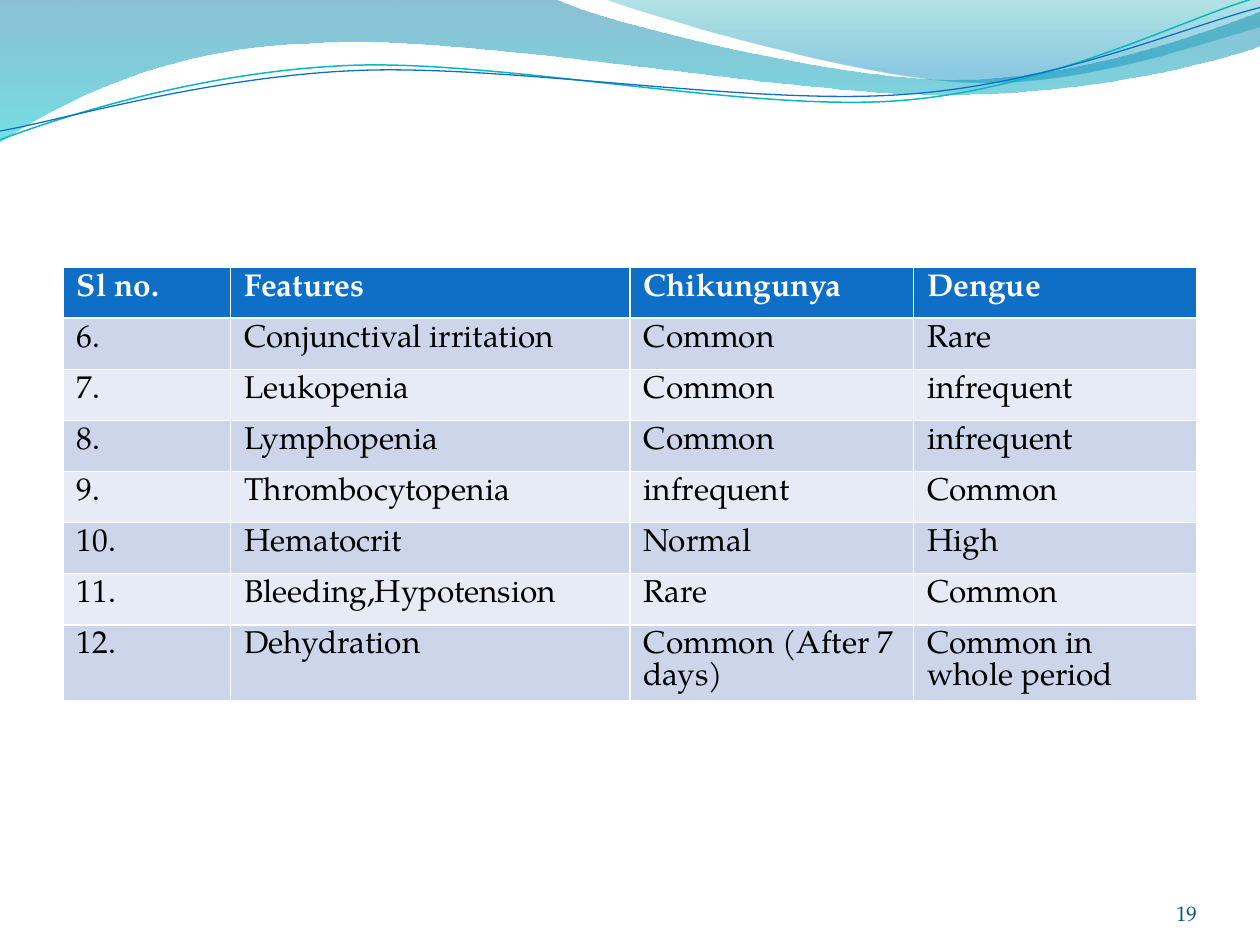
"""Build the slide comparing features of chikungunya and dengue."""
from dataclasses import dataclass
from typing import Optional

import lxml.etree
import pptx
import pptx.dml.color
import pptx.enum.text
import pptx.oxml.ns
import pptx.util
from pptx.util import Inches

FONT = "TeX Gyre Pagella"
COLUMN_WIDTHS = (1.33, 3.17, 2.25, 2.25)
ROWS = (
    ("Sl no.", "Features", "Chikungunya", "Dengue"),
    ("6.", "Conjunctival irritation", "Common", "Rare"),
    ("7.", "Leukopenia", "Common", "infrequent"),
    ("8.", "Lymphopenia", "Common", "infrequent"),
    ("9.", "Thrombocytopenia", "infrequent", "Common"),
    ("10.", "Hematocrit", "Normal", "High"),
    ("11.", "Bleeding,Hypotension", "Rare", "Common"),
    ("12.", "Dehydration", "Common (After 7 days)", "Common in whole period"),
)


@dataclass
class Stop:
    position: float
    color: str
    opacity: int


@dataclass
class Wave:
    """Outline in inches: a segment of one point is straight, one of three is a curve."""
    start: tuple
    segments: tuple
    stops: tuple = ()
    line_color: Optional[str] = None
    line_width: float = 0


WAVES = (
    Wave((0, 0), (
        ((4.4, -0.01),),
        ((4.76, 0.17), (6.64, 0.63), (7.58, 0.63)),
        ((8.53, 0.63), (9.58, 0.26), (10, 0.09)),
        ((10.01, 0.36),),
        ((9.83, 0.44), (8.7, 0.76), (7.46, 0.75)),
        ((6.22, 0.75), (3.82, 0.28), (2.57, 0.34)),
        ((1.29, 0.36), (0.46, 0.83), (-0.01, 1.13)),
    ), stops=(Stop(0, "0074A1", 45), Stop(1, "00C6CF", 55))),
    Wave((4.79, -0.01), (
        ((5.09, 0.11), (6.82, 0.62), (7.69, 0.65)),
        ((8.56, 0.69), (9.61, 0.32), (10, 0.21)),
        ((10, 0),),
    ), stops=(Stop(0, "00A1A9", 30), Stop(0.8, "008BBF", 45))),
    Wave((0, 1.11), (
        ((0.48, 0.93), (1.58, 0.57), (2.77, 0.52)),
        ((3.95, 0.47), (5.93, 0.89), (7.13, 0.8)),
        ((8.33, 0.71), (9.38, 0.15), (9.98, -0.02)),
    ), line_color="0AB8BF", line_width=0.85),
    Wave((0, 1.04), (
        ((0.47, 0.96), (1.64, 0.61), (2.83, 0.56)),
        ((4.03, 0.51), (5.97, 0.84), (7.17, 0.75)),
        ((8.36, 0.67), (9.41, 0.21), (10, 0.06)),
    ), line_color="0F6FC6", line_width=0.75),
)


def rgb(color: str) -> pptx.dml.color.RGBColor:
    return pptx.dml.color.RGBColor.from_string(color)


def bend_segments(shape, segments: tuple) -> None:
    """Merge the three lines of each curved segment into one cubic curve."""
    qualify = pptx.oxml.ns.qn
    lines = iter(list(shape.element.iter(qualify("a:lnTo"))))
    for segment in segments:
        first, *others = [next(lines) for point in segment]
        if others:
            curve = lxml.etree.Element(qualify("a:cubicBezTo"))
            first.addprevious(curve)
            for line in (first, *others):
                curve.append(line[0])
                line.getparent().remove(line)


def fill_gradient(shape, stops: tuple) -> None:
    shape.fill.gradient()
    shape.fill.gradient_angle = 270
    for target, stop in zip(shape.fill.gradient_stops, stops):
        target.position = stop.position
        target.color.rgb = rgb(stop.color)
    tag = pptx.oxml.ns.qn("a:alpha")
    colors = shape.element.spPr.iter(pptx.oxml.ns.qn("a:srgbClr"))
    for color, stop in zip(list(colors), stops):
        lxml.etree.SubElement(color, tag).set("val", str(stop.opacity * 1000))


def draw_wave(slide, wave: Wave) -> None:
    start_x, start_y = wave.start
    builder = slide.shapes.build_freeform(Inches(start_x), Inches(start_y))
    points = [(Inches(x), Inches(y)) for segment in wave.segments for x, y in segment]
    builder.add_line_segments(points, close=bool(wave.stops))
    shape = builder.convert_to_shape()
    shape.shadow.inherit = False
    bend_segments(shape, wave.segments)
    if wave.stops:
        fill_gradient(shape, wave.stops)
        shape.line.fill.background()
    else:
        shape.fill.background()
        shape.line.color.rgb = rgb(wave.line_color)
        shape.line.width = pptx.util.Pt(wave.line_width)


def write_text(text_frame, text: str, size: float, color: str, bold: bool = False):
    text_frame.text = text
    paragraph = text_frame.paragraphs[0]
    font = paragraph.runs[0].font
    font.name, font.size, font.bold = FONT, pptx.util.Pt(size), bold
    font.color.rgb = rgb(color)
    return paragraph


def draw_table(slide) -> None:
    row_height = pptx.util.Pt(29.2)
    table = slide.shapes.add_table(
        len(ROWS), len(COLUMN_WIDTHS), Inches(0.5), Inches(2.12),
        Inches(sum(COLUMN_WIDTHS)), row_height * len(ROWS)).table
    for column, width in zip(table.columns, COLUMN_WIDTHS):
        column.width = Inches(width)
    for row_index, texts in enumerate(ROWS):
        is_header = row_index == 0
        table.rows[row_index].height = row_height
        band = "0F6FC6" if is_header else ("E7EBF5", "CCD5EA")[row_index % 2]
        for column_index, text in enumerate(texts):
            cell = table.cell(row_index, column_index)
            cell.margin_left = cell.margin_right = Inches(0.11)
            cell.fill.solid()
            cell.fill.fore_color.rgb = rgb(band)
            color = "FFFFFF" if is_header else "000000"
            write_text(cell.text_frame, text, 18, color, is_header)


def draw_page_number(slide) -> None:
    box = slide.shapes.add_textbox(Inches(8.67), Inches(6.95), Inches(0.83), Inches(0.4))
    frame = box.text_frame
    frame.word_wrap = True
    frame.vertical_anchor = pptx.enum.text.MSO_ANCHOR.BOTTOM
    frame.margin_left = frame.margin_right = frame.margin_top = frame.margin_bottom = 0
    paragraph = write_text(frame, "19", 12, "045D75")
    paragraph.alignment = pptx.enum.text.PP_ALIGN.RIGHT


def main() -> None:
    presentation = pptx.Presentation()
    presentation.slide_width, presentation.slide_height = Inches(10), Inches(7.5)
    slide = presentation.slides.add_slide(presentation.slide_layouts[6])
    for wave in WAVES:
        draw_wave(slide, wave)
    draw_table(slide)
    draw_page_number(slide)
    presentation.save("out.pptx")


if __name__ == "__main__":
    main()
